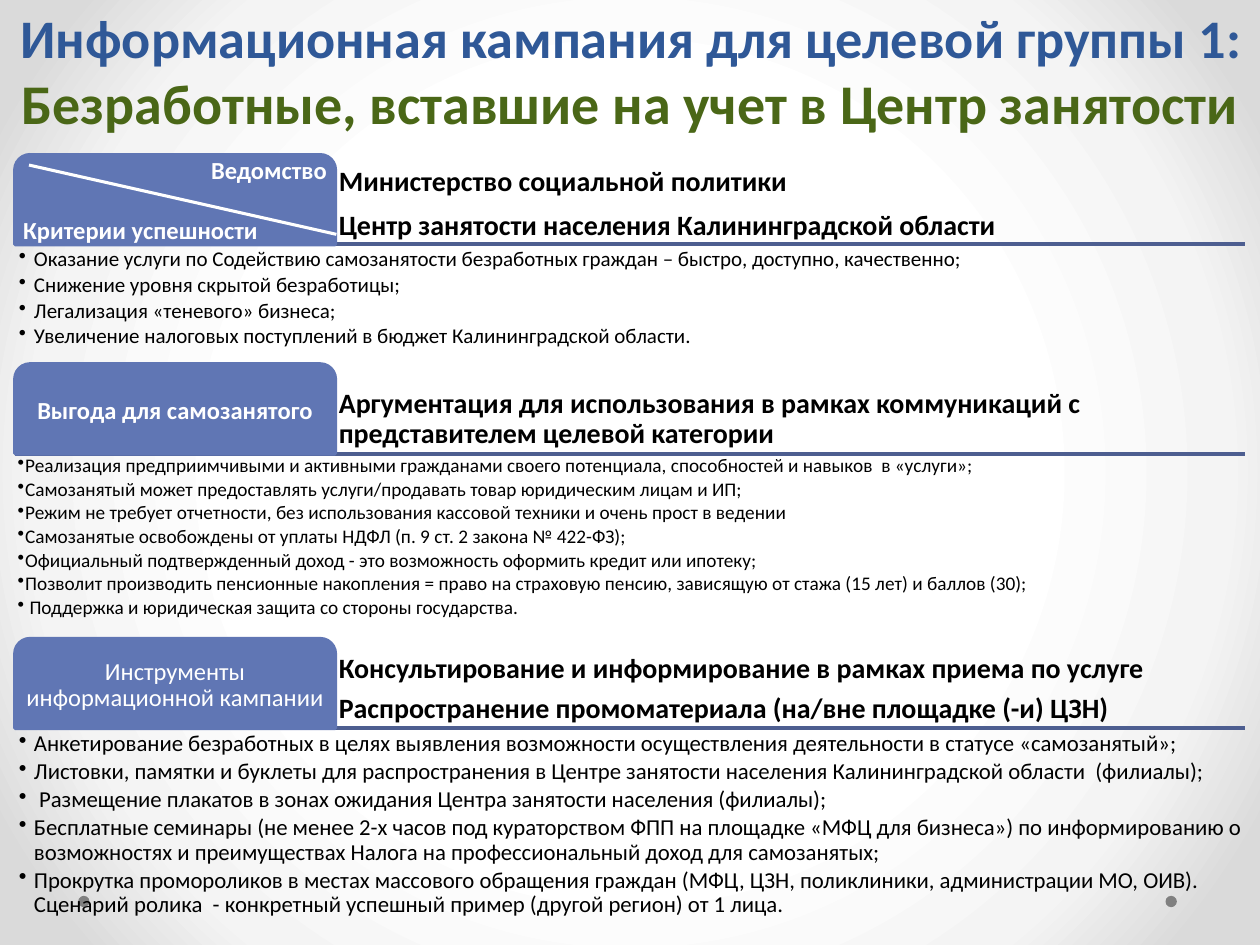
from lxml import etree
from pptx import Presentation
from pptx.dml.color import RGBColor
from pptx.enum.shapes import MSO_CONNECTOR, MSO_SHAPE
from pptx.enum.text import MSO_ANCHOR, PP_ALIGN
from pptx.oxml import parse_xml
from pptx.oxml.ns import nsdecls, qn
from pptx.util import Inches, Pt

STRAIGHT = MSO_CONNECTOR.STRAIGHT
OVAL, TAB = MSO_SHAPE.OVAL, MSO_SHAPE.ROUND_2_SAME_RECTANGLE
TOP, MIDDLE, BOTTOM = MSO_ANCHOR.TOP, MSO_ANCHOR.MIDDLE, MSO_ANCHOR.BOTTOM
LEFT, CENTER, RIGHT = PP_ALIGN.LEFT, PP_ALIGN.CENTER, PP_ALIGN.RIGHT
color = RGBColor.from_string

sections = [
    {"top": 1.23, "tab": ["Ведомство", "Критерии успешности"], "tab_bold": True,
     "heading": ["Министерство социальной политики",
                 "Центр занятости населения Калининградской области"],
     "heading_spacing": 1.0, "size": 12, "indent": 0.12, "inset": 0.03, "height": 0.91,
     "points": [
         "Оказание услуги по Содействию самозанятости безработных граждан – быстро, доступно, качественно;",
         "Снижение уровня скрытой безработицы;",
         "Легализация «теневого» бизнеса;",
         "Увеличение налоговых поступлений в бюджет Калининградской области."]},
    {"top": 2.89, "tab": ["Выгода для самозанятого"], "tab_bold": True,
     "heading": ["Аргументация для использования в рамках коммуникаций с представителем целевой категории"],
     "heading_spacing": 0.9, "size": 11, "indent": 0.06, "inset": 0.02, "height": 1.43,
     "points": [
         "Реализация предприимчивыми и активными гражданами своего потенциала, способностей и навыков  в «услуги»;",
         "Самозанятый может предоставлять услуги/продавать товар юридическим лицам и ИП;",
         "Режим не требует отчетности, без использования кассовой техники и очень прост в ведении",
         "Самозанятые освобождены от уплаты НДФЛ (п. 9 ст. 2 закона № 422-ФЗ);",
         "Официальный подтвержденный доход - это возможность оформить кредит или ипотеку;",
         "Позволит производить пенсионные накопления = право на страховую пенсию, зависящую от стажа (15 лет) и баллов (30);",
         " Поддержка и юридическая защита со стороны государства."]},
    {"top": 5.07, "tab": ["Инструменты информационной кампании"], "tab_bold": False,
     "heading": ["Консультирование и информирование в рамках приема по услуге",
                 "Распространение промоматериала (на/вне площадке (-и) ЦЗН)"],
     "heading_spacing": 0.9, "size": 13, "indent": 0.12, "inset": 0.03, "height": 1.43,
     "points": [
         "Анкетирование безработных в целях выявления возможности осуществления деятельности в статусе «самозанятый»;",
         "Листовки, памятки и буклеты для распространения в Центре занятости населения Калининградской области  (филиалы);",
         " Размещение плакатов в зонах ожидания Центра занятости населения (филиалы);",
         "Бесплатные семинары (не менее 2-х часов под кураторством ФПП на площадке «МФЦ для бизнеса») по информированию о возможностях и преимуществах Налога на профессиональный доход для самозанятых;",
         "Прокрутка промороликов в местах массового обращения граждан (МФЦ, ЦЗН, поликлиники, администрации МО, ОИВ). Сценарий ролика  - конкретный успешный пример (другой регион) от 1 лица."]},
]

prs = Presentation()
prs.slide_width, prs.slide_height = Inches(10), Inches(7.5)
slide = prs.slides.add_slide(prs.slide_layouts[6])

stops = "".join(
    f'<a:gs pos="{percent * 1000}"><a:srgbClr val="{shade}"/></a:gs>'
    for percent, shade in [(50, "FFFFFF"), (76, "F4F4F4"), (92, "DADADA")])
slide.element.cSld.insert(0, parse_xml(
    f'<p:bg {nsdecls("p", "a")}><p:bgPr><a:gradFill rotWithShape="1"><a:gsLst>{stops}</a:gsLst>'
    '<a:path path="circle"><a:fillToRect l="50000" t="50000" r="50000" b="50000"/></a:path>'
    '</a:gradFill><a:effectLst/></p:bgPr></p:bg>'))


def write(shape, lines, size, ink, bold, anchor, align, inset, spacing, gap):
    frame = shape.text_frame
    frame.text = "\n".join(lines)
    frame.word_wrap = True
    frame.vertical_anchor = anchor
    frame.margin_left = frame.margin_right = Inches(inset)
    frame.margin_top = frame.margin_bottom = Inches(inset)
    for paragraph in frame.paragraphs:
        paragraph.alignment = align
        paragraph.line_spacing = spacing
        paragraph.space_after = Pt(round(size * gap, 1))
        for run in paragraph.runs:
            run.font.name = "Calibri"
            run.font.size = Pt(size)
            run.font.bold = bold
            run.font.color.rgb = color(ink)
    return frame.paragraphs


def draw_line(x1, y1, x2, y2, ink, weight):
    line = slide.shapes.add_connector(STRAIGHT, Inches(x1), Inches(y1), Inches(x2), Inches(y2))
    line.line.color.rgb = color(ink)
    line.line.width = Pt(weight)
    etree.SubElement(line._element.spPr, qn("a:effectLst"))


for dot_left in (9.25, 0.62):
    dot = slide.shapes.add_shape(OVAL, Inches(dot_left), Inches(7.11), Inches(0.09), Inches(0.09))
    dot.shadow.inherit = False
    dot.fill.solid()
    dot.fill.fore_color.rgb = color("808080")
    dot.line.fill.background()

title = slide.shapes.add_textbox(Inches(0.01), Inches(0.13), Inches(9.99), Inches(1))
title_lines = ["Информационная кампания для целевой группы 1:\vБезработные, вставшие на учет в Центр занятости"]
headline = write(title, title_lines, 32, "4A6717", True, BOTTOM, CENTER, 0.05, 1.0, 0)[0]
headline.runs[0].font.size = Pt(31)
headline.runs[0].font.color.rgb = color("2F5897")

tab_height = 0.71
for section in sections:
    top = section["top"]
    rule_y = top + tab_height
    draw_line(0.12, rule_y, 9.88, rule_y, "4D5E90", 2.25)

    heading = slide.shapes.add_textbox(Inches(2.66), Inches(top), Inches(7.23), Inches(tab_height))
    write(heading, section["heading"], 16, "000000", True, BOTTOM, LEFT, 0.03,
          section["heading_spacing"], 0.35)

    tab = slide.shapes.add_shape(TAB, Inches(0.12), Inches(top), Inches(2.54), Inches(tab_height))
    tab.shadow.inherit = False
    tab.fill.solid()
    tab.fill.fore_color.rgb = color("6076B4")
    tab.line.color.rgb = color("6076B4")
    tab.line.width = Pt(2.25)
    labels = write(tab, section["tab"], 14, "FFFFFF", section["tab_bold"], MIDDLE, CENTER, 0.03, 0.9, 0.35)
    if len(labels) == 2:
        labels[0].alignment, labels[1].alignment = RIGHT, LEFT
        labels[0].space_after = Pt(19)

    details = slide.shapes.add_textbox(Inches(0.12), Inches(rule_y), Inches(9.76), Inches(section["height"]))
    for point in write(details, section["points"], section["size"], "000000", False, TOP, LEFT,
                       section["inset"], 0.9, 0.15):
        point.level = 1
        properties = point._p.get_or_add_pPr()
        properties.set("marL", str(Inches(section["indent"])))
        properties.set("indent", str(-Inches(section["indent"])))
        etree.SubElement(properties, qn("a:buChar"), char="•")

draw_line(0.23, 1.31, 2.67, 1.86, "FFFFFF", 1.75)

prs.save("out.pptx")
